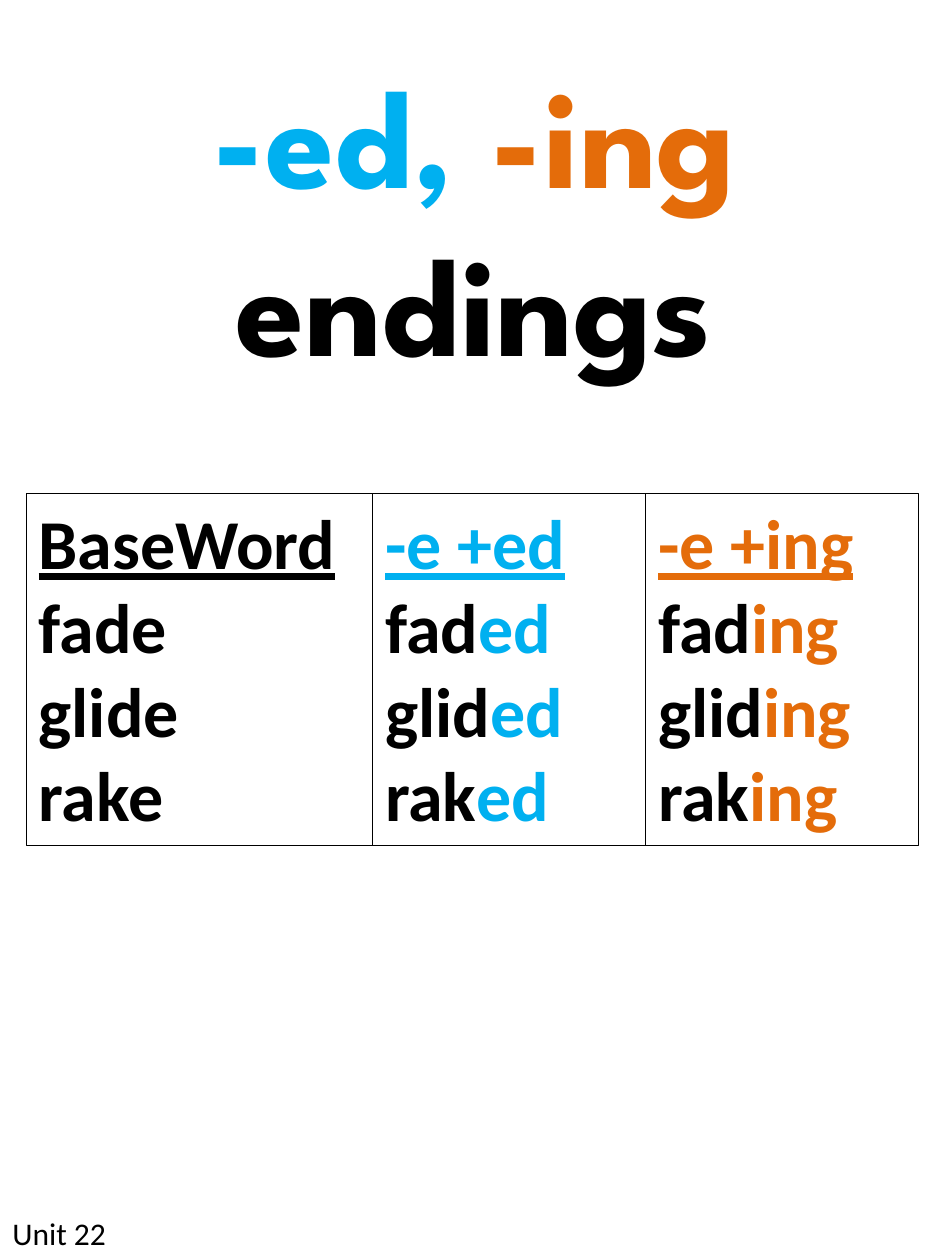
from pptx import Presentation
from pptx import util as u
from pptx.dml.color import RGBColor
from pptx.enum import shapes, text

COLORS = {"ed": "00B0F0", "ing": "E46C0A", "base": "000000"}
TITLE_FONT = {"name": "League Spartan", "size": u.Pt(80), "bold": True}
WORD_FONT = {"name": "Calibri", "size": u.Pt(40), "bold": True}
HEAD_FONT = {**WORD_FONT, "underline": True}
UNIT_FONT = {"name": "Calibri", "size": u.Pt(18)}
FRAME = {"word_wrap": True, "auto_size": text.MSO_AUTO_SIZE.NONE,
         "vertical_anchor": text.MSO_ANCHOR.TOP}

STEMS = ["fad", "glid", "rak"]
# heading, ending, colour of the ending, left, width
COLUMNS = [("BaseWord", "e", "base", 15, 198),
           ("-e +ed", "ed", "ed", 213, 156),
           ("-e +ing", "ing", "ing", 369, 156)]
BOX_TOP, BOX_HEIGHT = 282, 201


def set_all(obj, values):
    for name, value in values.items():
        setattr(obj, name, value)


def add_run(p, words, color, font):
    r = p.add_run()
    r.text = words
    set_all(r.font, font)
    r.font.color.rgb = RGBColor.from_string(COLORS[color])


def add_title(s):
    sp = s.shapes.title
    set_all(sp, {"left": u.Pt(16), "top": u.Pt(24),
                 "width": u.Pt(510), "height": u.Pt(201)})
    set_all(sp.text_frame, FRAME)
    p = sp.text_frame.paragraphs[0]
    p.alignment = text.PP_ALIGN.CENTER
    for words, color in [("-ed, ", "ed"), ("-ing ", "ing"), ("endings", "base")]:
        add_run(p, words, color, TITLE_FONT)


def add_unit(s):
    sp = s.shapes.add_textbox(u.Pt(0), u.Pt(690), u.Pt(96), u.Pt(30))
    set_all(sp.text_frame, FRAME)
    add_run(sp.text_frame.paragraphs[0], "Unit 22", "base", UNIT_FONT)


def add_word_box(group, heading, ending, color, left, width):
    sp = group.shapes.add_shape(shapes.MSO_SHAPE.RECTANGLE, u.Pt(left),
                                u.Pt(BOX_TOP), u.Pt(width), u.Pt(BOX_HEIGHT))
    sp.shadow.inherit = False
    sp.fill.background()
    sp.line.color.rgb = RGBColor.from_string(COLORS["base"])
    sp.line.width = u.Pt(0.75)
    tf = sp.text_frame
    set_all(tf, FRAME)
    add_run(tf.paragraphs[0], heading, color, HEAD_FONT)
    for stem in STEMS:
        p = tf.add_paragraph()
        if color == "base":
            add_run(p, stem + ending, color, WORD_FONT)
        else:
            add_run(p, stem, "base", WORD_FONT)
            add_run(p, ending, color, WORD_FONT)
    for p in tf.paragraphs:
        p.alignment = text.PP_ALIGN.LEFT


def main():
    prs = Presentation()
    prs.slide_width, prs.slide_height = u.Pt(540), u.Pt(720)
    s = prs.slides.add_slide(prs.slide_layouts[5])

    # Unit label and title
    add_unit(s)
    add_title(s)

    # Word columns, side by side
    group = s.shapes.add_group_shape()
    for column in COLUMNS:
        add_word_box(group, *column)

    prs.save("out.pptx")


if __name__ == "__main__":
    main()
